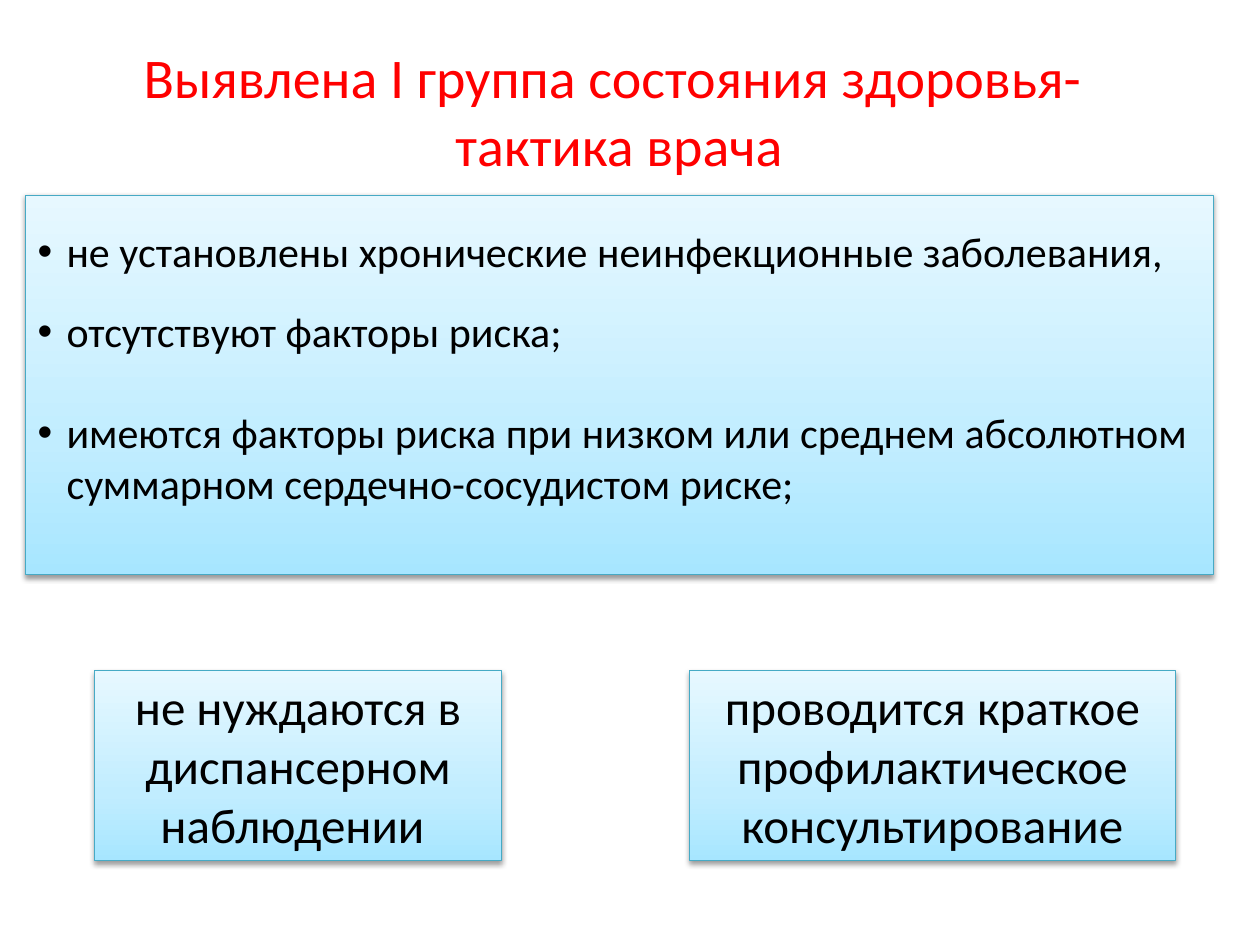
"""Build a slide on the physician's tactics for health group I."""
import copy

import pptx
import pptx.dml.color
import pptx.enum.shapes
import pptx.enum.text
import pptx.oxml
import pptx.oxml.ns
import pptx.util
from pptx.dml.color import RGBColor
from pptx.util import Inches, Pt

BLACK = RGBColor(0x00, 0x00, 0x00)
RED = RGBColor(0xFF, 0x00, 0x00)
BORDER = RGBColor(0x46, 0xAA, 0xC5)
GRADIENT = (
    (0, RGBColor(0xA7, 0xE6, 0xFF)),
    (0.35, RGBColor(0xC1, 0xED, 0xFF)),
    (1, RGBColor(0xE7, 0xF8, 0xFF)),
)
SHADOW = (
    f'<a:outerShdw {pptx.oxml.ns.nsdecls("a")} blurRad="{Pt(3.1)}" dist="{Pt(1.6)}" '
    'dir="5400000" rotWithShape="0"><a:srgbClr val="000000">'
    '<a:alpha val="38000"/></a:srgbClr></a:outerShdw>'
)
TITLE = ("Выявлена I группа состояния здоровья- ", "тактика врача")
CRITERIA = (
    ("не установлены хронические неинфекционные заболевания,", 0),
    ("отсутствуют факторы риска;", 17),
    ("имеются факторы риска при низком или среднем абсолютном "
     "суммарном сердечно-сосудистом риске;", 29),
)
ACTIONS = (
    (0.75, 3.23, "не нуждаются в диспансерном наблюдении "),
    (5.47, 3.86, "проводится краткое профилактическое консультирование"),
)


class SlideBuilder:
    """Hold the shared style and the current slide."""

    font = "Calibri"
    center = pptx.enum.text.PP_ALIGN.CENTER
    left = pptx.enum.text.PP_ALIGN.LEFT

    def __init__(self, page):
        self.page = page

    def set_text(self, frame, lines, size, color, align):
        """Fill a text frame with paragraphs of one style."""
        frame.word_wrap = True
        frame.auto_size = pptx.enum.text.MSO_AUTO_SIZE.NONE
        frame.vertical_anchor = pptx.enum.text.MSO_ANCHOR.TOP
        frame.text = "\n".join(lines)
        for para in frame.paragraphs:
            para.alignment = align
            para.space_before = Pt(0)
            para.font.name = self.font
            para.font.size = Pt(size)
            para.font.color.rgb = color

    def title(self, lines, left, top, width, height):
        """Place and format the title placeholder."""
        box = self.page.shapes.title
        box.left, box.top = Inches(left), Inches(top)
        box.width, box.height = Inches(width), Inches(height)
        self.set_text(box.text_frame, lines, 32, RED, self.center)

    def panel(self, left, top, width, height):
        """Add a gradient rectangle with a soft shadow."""
        box = self.page.shapes.add_shape(
            pptx.enum.shapes.MSO_SHAPE.RECTANGLE,
            Inches(left), Inches(top), Inches(width), Inches(height))
        box.fill.gradient()
        box.fill.gradient_angle = 90
        properties = box._element.spPr
        stops = properties.find(".//" + pptx.oxml.ns.qn("a:gsLst"))
        stops.insert(1, copy.deepcopy(stops[0]))
        for stop, (position, color) in zip(box.fill.gradient_stops, GRADIENT):
            stop.position = position
            stop.color.rgb = color
        box.line.color.rgb = BORDER
        box.line.width = Pt(0.75)
        box.shadow.inherit = False
        effects = properties.find(pptx.oxml.ns.qn("a:effectLst"))
        effects.append(pptx.oxml.parse_xml(SHADOW))
        return box

    def action(self, text, *place):
        """Add a panel with one centred statement."""
        box = self.panel(*place)
        self.set_text(box.text_frame, [text], 28, BLACK, self.center)

    def bullets(self, items, *place):
        """Add a panel with a bulleted list of (text, space before) items."""
        frame = self.panel(*place).text_frame
        self.set_text(frame, [text for text, space in items], 24, BLACK, self.left)
        frame.margin_top = Inches(0.24)
        for para, (text, space) in zip(frame.paragraphs, items):
            para.space_before = Pt(space)
            settings = para._p.get_or_add_pPr()
            settings.set("marL", str(Inches(0.23)))
            settings.set("indent", str(-Inches(0.23)))
            for tag, attribute, value in (
                    ("buFont", "typeface", "Arial"), ("buChar", "char", "•")):
                bullet = pptx.oxml.parse_xml(
                    f'<a:{tag} {pptx.oxml.ns.nsdecls("a")} {attribute}="{value}"/>')
                settings.insert_element_before(bullet, "a:tabLst", "a:defRPr", "a:extLst")


def main():
    """Create and save the deck."""
    deck = pptx.Presentation()
    deck.slide_width, deck.slide_height = Inches(10), Inches(7.5)
    builder = SlideBuilder(deck.slides.add_slide(deck.slide_layouts[5]))
    builder.title(TITLE, 0.2, 0.29, 9.43, 1.72)
    builder.bullets(CRITERIA, 0.2, 1.55, 9.43, 3.01)
    for left, width, text in ACTIONS:
        builder.action(text, left, 5.32, width, 1.51)
    deck.save("out.pptx")


if __name__ == "__main__":
    main()
